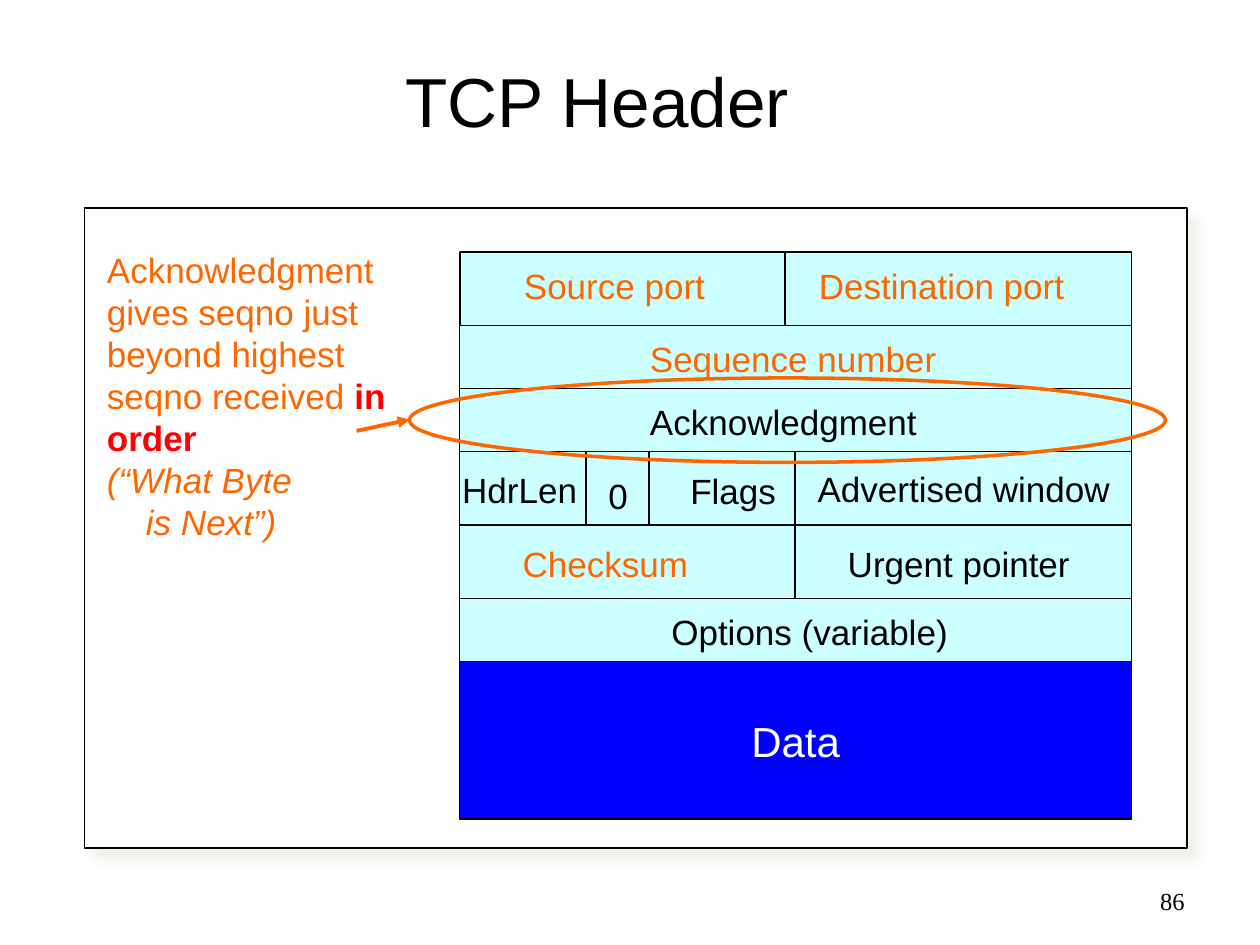
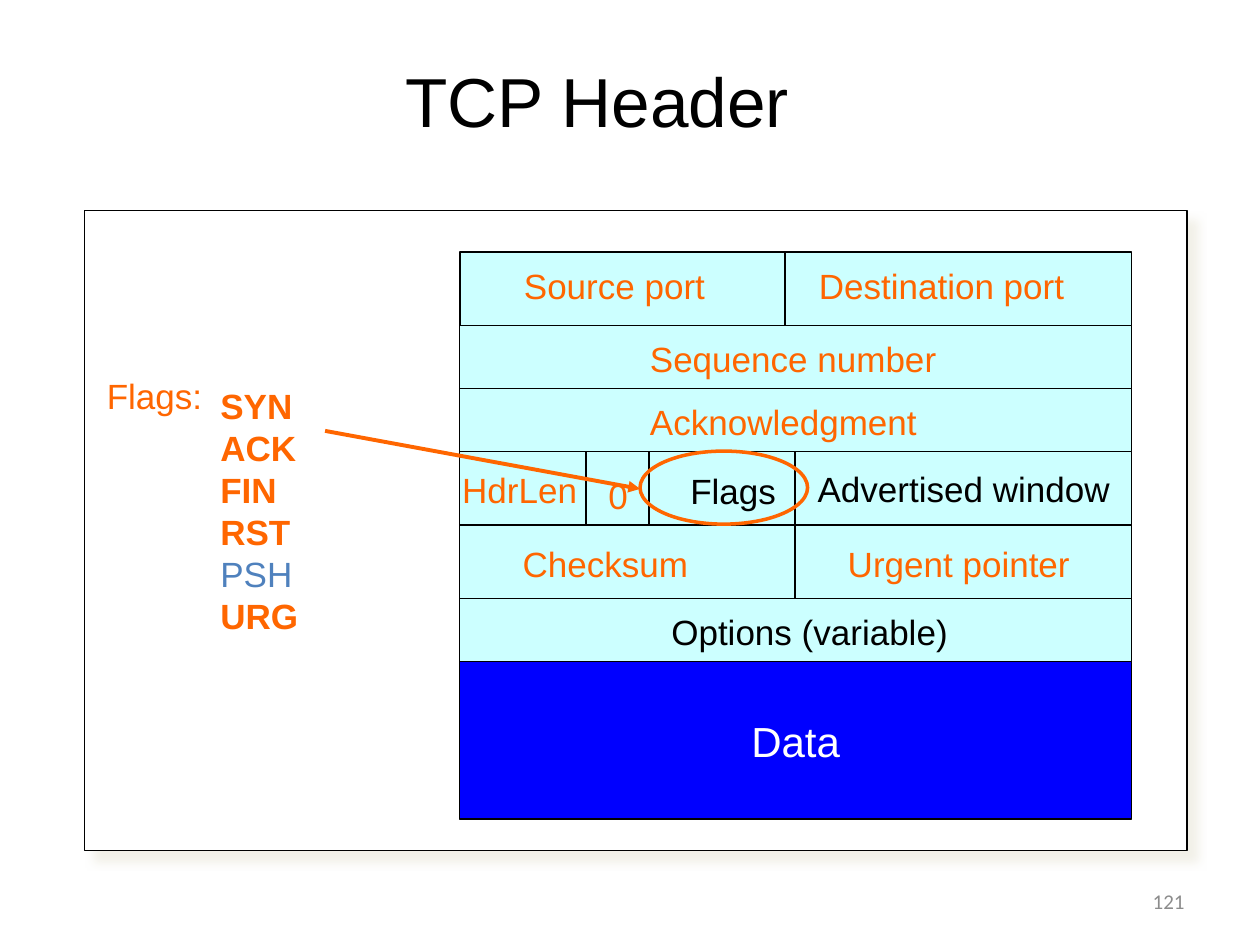
import dataclasses
import itertools

import lxml.etree
import pptx
import pptx.dml.color
import pptx.enum.shapes
import pptx.enum.text
import pptx.oxml
import pptx.oxml.ns
import pptx.util

Inches = pptx.util.Inches
Pt = pptx.util.Pt
Shape = pptx.enum.shapes.MSO_SHAPE
Align = pptx.enum.text.PP_ALIGN
Anchor = pptx.enum.text.MSO_ANCHOR
AutoSize = pptx.enum.text.MSO_AUTO_SIZE


@dataclasses.dataclass(frozen=True)
class Theme:
    font: str = "Arial"
    black: str = "000000"
    white: str = "FFFFFF"
    orange: str = "FF6600"
    red: str = "FF0000"
    steel: str = "4F81BD"
    gray: str = "8C8C8C"
    cell: str = "CCFFFF"
    data: str = "0000FF"
    shadow: str = "EEECE1"
    title_size: float = 39.6
    data_size: float = 24
    body_size: float = 20
    body_leading: float = 24
    thin: float = 0.75
    ring: float = 2
    arrow: float = 2.25


@dataclasses.dataclass(frozen=True)
class Span:
    text: str
    color: str
    bold: bool = False
    italic: bool = False


THEME = Theme()
TABLE_LEFT, TABLE_TOP, TABLE_RIGHT, DATA_HEIGHT = 3.65, 2, 8.98, 1.25
TALL, SHORT = 7 / 12, 0.5
HEADER_ROWS = [
    (TALL, [6.23]),
    (SHORT, []),
    (SHORT, []),
    (TALL, [6.31]),
    (TALL, [6.31]),
    (SHORT, []),
]
FLAG_DIVIDERS = [4.65, 5.15]
FLAG_ROW = 3
LABELS = [
    ("Source port", 4.06, 2.05, 1.64),
    ("Destination port", 6.4, 2.05, 2.15),
    ("Sequence number", 5.06, 2.63, 2.5),
    ("Acknowledgment", 5.06, 3.13, 2.34),
    ("Advertised window", 6.39, 3.66, 2.52),
    ("HdrLen", 3.57, 3.67, 1.17),
    ("Flags", 5.38, 3.68, 0.88),
    ("0", 4.73, 3.72, 0.36),
    ("Checksum", 4.05, 4.26, 1.56),
    ("Urgent pointer", 6.63, 4.26, 1.97),
    ("Options (variable)", 5.23, 4.8, 2.44),
]
LABEL_HEIGHT = 0.43
COVERED = {"Source port", "Destination port", "Sequence number", "Checksum"}


def rgb(color):
    return pptx.dml.color.RGBColor.from_string(color)


class Page:
    def __init__(self, deck, theme):
        self.theme = theme
        self.slide = deck.slides.add_slide(deck.slide_layouts[5])

    def style(self, run, color, size, font=None, bold=False, italic=False):
        run.font.name = font or self.theme.font
        run.font.size = Pt(size)
        run.font.color.rgb = rgb(color)
        run.font.bold = bold
        run.font.italic = italic

    def title(self, text):
        box = self.slide.shapes.title
        box.left, box.top, box.width, box.height = map(Inches, (0.33, 0.42, 8.82, 0.75))
        box.text_frame.text = text
        box.text_frame.vertical_anchor = Anchor.MIDDLE
        para = box.text_frame.paragraphs[0]
        para.alignment = Align.CENTER
        self.style(para.runs[0], self.theme.black, self.theme.title_size)

    def shape(self, kind, left, top, width, height, fill=None, line=None, weight=None):
        shape = self.slide.shapes.add_shape(kind, *map(Inches, (left, top, width, height)))
        shape.shadow.inherit = False
        if fill:
            shape.fill.solid()
            shape.fill.fore_color.rgb = rgb(fill)
        else:
            shape.fill.background()
        shape.line.color.rgb = rgb(line or self.theme.black)
        shape.line.width = Pt(weight or self.theme.thin)
        return shape

    def frame(self, top):
        frame = self.shape(Shape.RECTANGLE, 0.67, top, 8.75, 5.08, self.theme.white)
        effects = frame._element.spPr.find(pptx.oxml.ns.qn("a:effectLst"))
        effects.append(pptx.oxml.parse_xml(
            f'<a:outerShdw {pptx.oxml.ns.nsdecls("a")} blurRad="{Pt(5)}" dist="{Pt(8.5)}" '
            f'dir="2700000" algn="tl" rotWithShape="0"><a:srgbClr val="{self.theme.shadow}">'
            '<a:alpha val="75000"/></a:srgbClr></a:outerShdw>'))

    def text(self, left, top, width, height, paragraphs, wrap=False):
        box = self.slide.shapes.add_textbox(*map(Inches, (left, top, width, height)))
        box.text_frame.word_wrap = wrap
        box.text_frame.auto_size = AutoSize.SHAPE_TO_FIT_TEXT
        for index, spans in enumerate(paragraphs):
            para = box.text_frame.paragraphs[0] if index == 0 else box.text_frame.add_paragraph()
            para.line_spacing = Pt(self.theme.body_leading)
            for span in spans:
                run = para.add_run()
                run.text = span.text
                self.style(run, span.color, self.theme.body_size,
                           bold=span.bold, italic=span.italic)
        return box

    def number(self, text, color, size, font):
        box = self.slide.shapes.add_textbox(*map(Inches, (7.17, 6.95, 2.33, 0.4)))
        box.text_frame.word_wrap = True
        box.text_frame.vertical_anchor = Anchor.MIDDLE
        box.text_frame.text = text
        para = box.text_frame.paragraphs[0]
        para.alignment = Align.RIGHT
        self.style(para.runs[0], color, size, font)

    def line(self, start, end, color, weight, arrow=False):
        line = self.slide.shapes.add_connector(
            pptx.enum.shapes.MSO_CONNECTOR.STRAIGHT, *map(Inches, (*start, *end)))
        line.line.color.rgb = rgb(color)
        line.line.width = Pt(weight)
        properties = line._element.spPr
        if arrow:
            lxml.etree.SubElement(line.line._get_or_add_ln(),
                                  pptx.oxml.ns.qn("a:tailEnd"), type="triangle")
        lxml.etree.SubElement(properties, pptx.oxml.ns.qn("a:effectLst"))

    def header(self, covered):
        theme = self.theme
        heights = [height for height, _ in HEADER_ROWS]
        tops = list(itertools.accumulate(heights, initial=TABLE_TOP))
        for top, (height, splits) in zip(tops, HEADER_ROWS):
            edges = [TABLE_LEFT, *splits, TABLE_RIGHT]
            for left, right in zip(edges, edges[1:]):
                self.shape(Shape.RECTANGLE, left, top, right - left, height, theme.cell)
        for x in FLAG_DIVIDERS:
            self.line((x, tops[FLAG_ROW]), (x, tops[FLAG_ROW + 1]), theme.black, theme.thin)
        for text, left, top, width in LABELS:
            color = theme.orange if text in covered else theme.black
            self.text(left, top, width, LABEL_HEIGHT, [[Span(text, color)]])
        data = self.shape(Shape.RECTANGLE, TABLE_LEFT, tops[-1],
                          TABLE_RIGHT - TABLE_LEFT, DATA_HEIGHT, theme.data)
        data.text_frame.text = "Data"
        data.text_frame.vertical_anchor = Anchor.MIDDLE
        para = data.text_frame.paragraphs[0]
        para.alignment = Align.CENTER
        self.style(para.runs[0], theme.white, theme.data_size)

    def callout(self, left, top, width, height, start, end):
        theme = self.theme
        self.shape(Shape.OVAL, left, top, width, height, line=theme.orange, weight=theme.ring)
        self.line(start, end, theme.orange, theme.arrow, arrow=True)


def header_page(deck, frame_top, covered):
    page = Page(deck, THEME)
    page.title("TCP Header")
    page.frame(frame_top)
    page.header(covered)
    return page


def acknowledgment_page(deck):
    page = header_page(deck, 1.65, COVERED)
    note = page.text(0.75, 1.92, 2.42, 2.79, [
        [Span("Acknowledgment gives seqno just beyond highest seqno received ", THEME.orange),
         Span("in order", THEME.red, bold=True)],
        [Span("(“What Byte", THEME.orange, italic=True)],
        [Span("is Next”)", THEME.orange, italic=True)],
    ], wrap=True)
    note.text_frame.paragraphs[-1]._p.get_or_add_pPr().set("marL", str(Inches(0.31)))
    page.callout(3.25, 3, 6, 0.67, (2.83, 3.42), (3.25, 3.33))
    page.number("86", THEME.black, 14, "Times New Roman")


def flags_page(deck):
    page = header_page(deck, 1.67, COVERED | {"Acknowledgment", "HdrLen", "0", "Urgent pointer"})
    page.text(0.75, 2.92, 0.96, LABEL_HEIGHT, [[Span("Flags:", THEME.orange)]])
    flags = [[Span(flag, THEME.steel) if flag == "PSH" else Span(flag, THEME.orange, bold=True)]
             for flag in ("SYN", "ACK", "FIN", "RST", "PSH", "URG")]
    page.text(1.65, 3, 0.82, 2.1, flags)
    page.callout(5.08, 3.58, 1.33, 0.58, (2.58, 3.42), (5.08, 3.88))
    page.number("121", THEME.gray, 12, "Calibri")


def main():
    deck = pptx.Presentation()
    deck.slide_width, deck.slide_height = Inches(10), Inches(7.5)
    acknowledgment_page(deck)
    flags_page(deck)
    deck.save("out.pptx")


if __name__ == "__main__":
    main()
